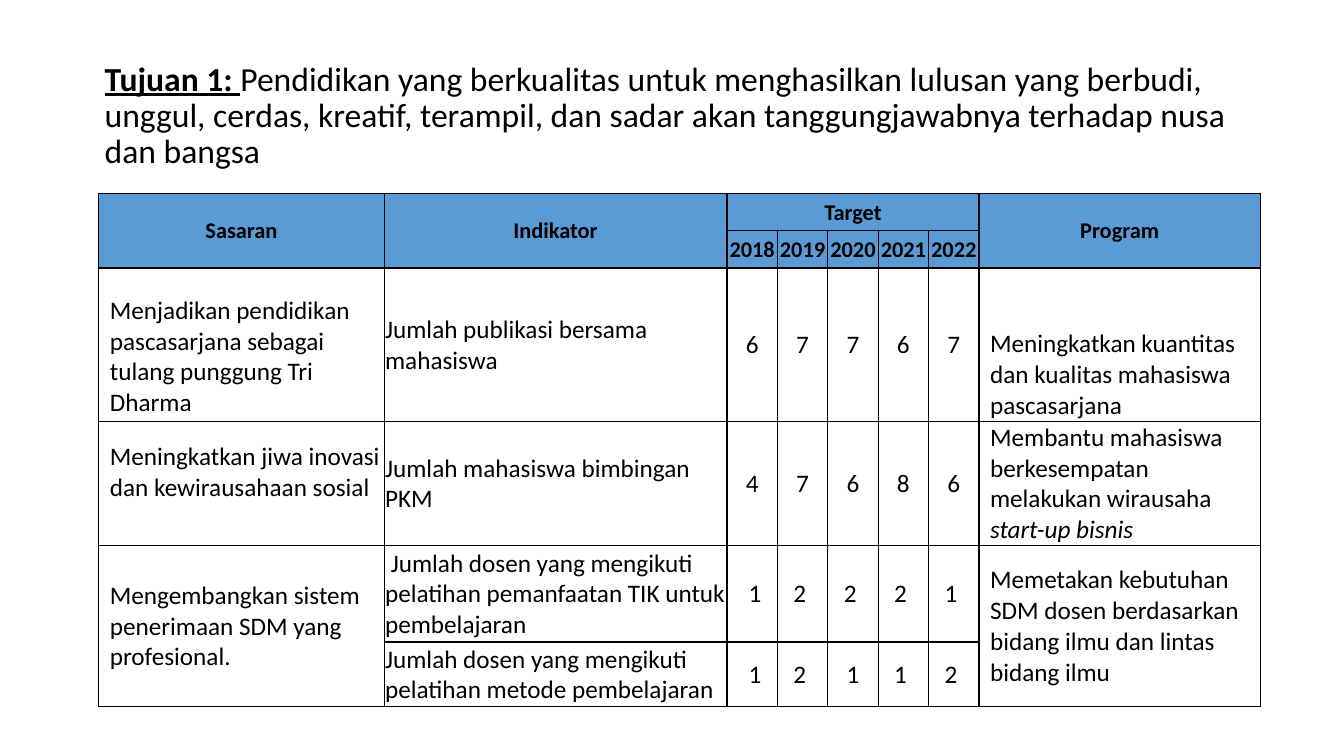
from dataclasses import dataclass

from lxml.etree import SubElement
from pptx import Presentation
from pptx.dml.color import RGBColor
from pptx.enum.text import MSO_ANCHOR, MSO_AUTO_SIZE, PP_ALIGN
from pptx.oxml.ns import qn
from pptx.util import Pt

EMU_PER_PX = 9144  # 100 px to the inch


@dataclass(frozen=True)
class Theme:
    font: str = "Calibri"
    ink: RGBColor = RGBColor(0x00, 0x00, 0x00)
    header_fill: RGBColor = RGBColor(0x5B, 0x9B, 0xD5)
    border: str = "000000"
    title_size: int = 24
    header_size: int = 16
    body_size: int = 18
    border_points: int = 1


def px(length):
    return length * EMU_PER_PX


class SlideBuilder:
    def __init__(self, deck, theme):
        self.theme = theme
        self.slide = deck.slides.add_slide(deck.slide_layouts[6])

    def style(self, span, size, bold=False, italic=False, underline=False):
        font = span.font
        font.name, font.size = self.theme.font, Pt(size)
        font.bold, font.italic, font.underline = bold, italic, underline
        font.color.rgb = self.theme.ink

    def title(self, left, top, width, height, lead, text):
        box = self.slide.shapes.add_textbox(px(left), px(top), px(width), px(height))
        frame = box.text_frame
        frame.word_wrap = True
        frame.auto_size = MSO_AUTO_SIZE.NONE
        frame.vertical_anchor = MSO_ANCHOR.MIDDLE
        para = frame.paragraphs[0]
        para.line_spacing = 0.9
        para.text = lead
        self.style(para.runs[0], self.theme.title_size, bold=True, underline=True)
        span = para.add_run()
        span.text = text
        self.style(span, self.theme.title_size)

    def table(self, left, top, columns, rows):
        frame = self.slide.shapes.add_table(
            len(rows), len(columns), px(left), px(top), px(sum(columns)), px(sum(rows)))
        table = frame.table
        table.first_row = table.horz_banding = False
        for column, width in zip(table.columns, columns):
            column.width = px(width)
        for row, height in zip(table.rows, rows):
            row.height = px(height)
        return table

    def cell(self, cell, text, header=False, centred=False, indent=0, tail=""):
        cell.margin_left = cell.margin_top = cell.margin_right = px(1)
        cell.margin_bottom = 0
        cell.vertical_anchor = MSO_ANCHOR.MIDDLE
        self.borders(cell)
        if header:
            cell.fill.solid()
            cell.fill.fore_color.rgb = self.theme.header_fill
        else:
            cell.fill.background()
        size = self.theme.header_size if header else self.theme.body_size
        para = cell.text_frame.paragraphs[0]
        para.text = text
        para.alignment = PP_ALIGN.CENTER if centred else PP_ALIGN.LEFT
        if indent:
            para._p.get_or_add_pPr().set("marL", str(px(indent)))
        for span in para.runs:
            self.style(span, size, bold=header)
        if tail:
            span = para.add_run()
            span.text = tail
            self.style(span, size, italic=True)

    def borders(self, cell):
        properties = cell._tc.get_or_add_tcPr()
        for side in ("a:lnL", "a:lnR", "a:lnT", "a:lnB"):
            line = SubElement(properties, qn(side), w=str(Pt(self.theme.border_points)))
            fill = SubElement(line, qn("a:solidFill"))
            SubElement(fill, qn("a:srgbClr"), val=self.theme.border)


COLUMNS = [283, 340] + [50] * 5 + [279]
ROWS = [37, 37, 152, 122, 96, 64]
GOAL, PROGRAM = 0, 7
YEARS = range(2, 7)

HEADER = [
    ["Sasaran", "Indikator", "Target", "", "", "", "", "Program"],
    ["", "", "2018", "2019", "2020", "2021", "2022", ""],
]
BODY = [
    ["Menjadikan pendidikan pascasarjana sebagai tulang punggung Tri Dharma",
     "Jumlah publikasi bersama mahasiswa", "6", "7", "7", "6", "7",
     "Meningkatkan kuantitas dan kualitas mahasiswa pascasarjana"],
    ["Meningkatkan jiwa inovasi dan kewirausahaan sosial",
     "Jumlah mahasiswa bimbingan PKM", "4", "7", "6", "8", "6",
     "Membantu mahasiswa berkesempatan melakukan wirausaha "],
    ["Mengembangkan sistem penerimaan SDM yang profesional.",
     " Jumlah dosen yang mengikuti pelatihan pemanfaatan TIK untuk pembelajaran",
     " 1", "2 ", "2 ", "2 ", "1 ",
     "Memetakan kebutuhan SDM dosen berdasarkan bidang ilmu dan lintas bidang ilmu"],
    ["", "Jumlah dosen yang mengikuti pelatihan metode pembelajaran",
     " 1", "2 ", "1", "1 ", "2 ", ""],
]
ITALIC_TAILS = {(3, PROGRAM): "start-up bisnis"}
# First and last cell of each merged block
MERGES = [((0, 0), (1, 0)), ((0, 1), (1, 1)), ((0, 2), (0, 6)),
          ((0, 7), (1, 7)), ((4, 0), (5, 0)), ((4, 7), (5, 7))]


def main():
    deck = Presentation()
    deck.slide_width, deck.slide_height = px(1333), px(750)
    builder = SlideBuilder(deck, Theme())

    # Target table
    table = builder.table(98, 192, COLUMNS, ROWS)
    for row, texts in enumerate(HEADER + BODY):
        header = row < len(HEADER)
        for column, text in enumerate(texts):
            builder.cell(
                table.cell(row, column), text, header,
                centred=header or column in YEARS,
                indent=10 if not header and column in (GOAL, PROGRAM) else 0,
                tail=ITALIC_TAILS.get((row, column), ""))
    for first, last in MERGES:
        table.cell(*first).merge(table.cell(*last))

    # Cells whose text sits off the middle
    table.cell(2, GOAL).margin_top = px(24)
    table.cell(3, GOAL).margin_bottom = px(22)
    for row in (2, 3):
        table.cell(row, PROGRAM).vertical_anchor = MSO_ANCHOR.BOTTOM

    # Title
    builder.title(
        94, 80, 1150, 71, "Tujuan 1: ",
        "Pendidikan yang berkualitas untuk menghasilkan lulusan yang berbudi, unggul, "
        "cerdas, kreatif, terampil, dan sadar akan tanggungjawabnya terhadap nusa dan bangsa")

    deck.save("out.pptx")


if __name__ == "__main__":
    main()
